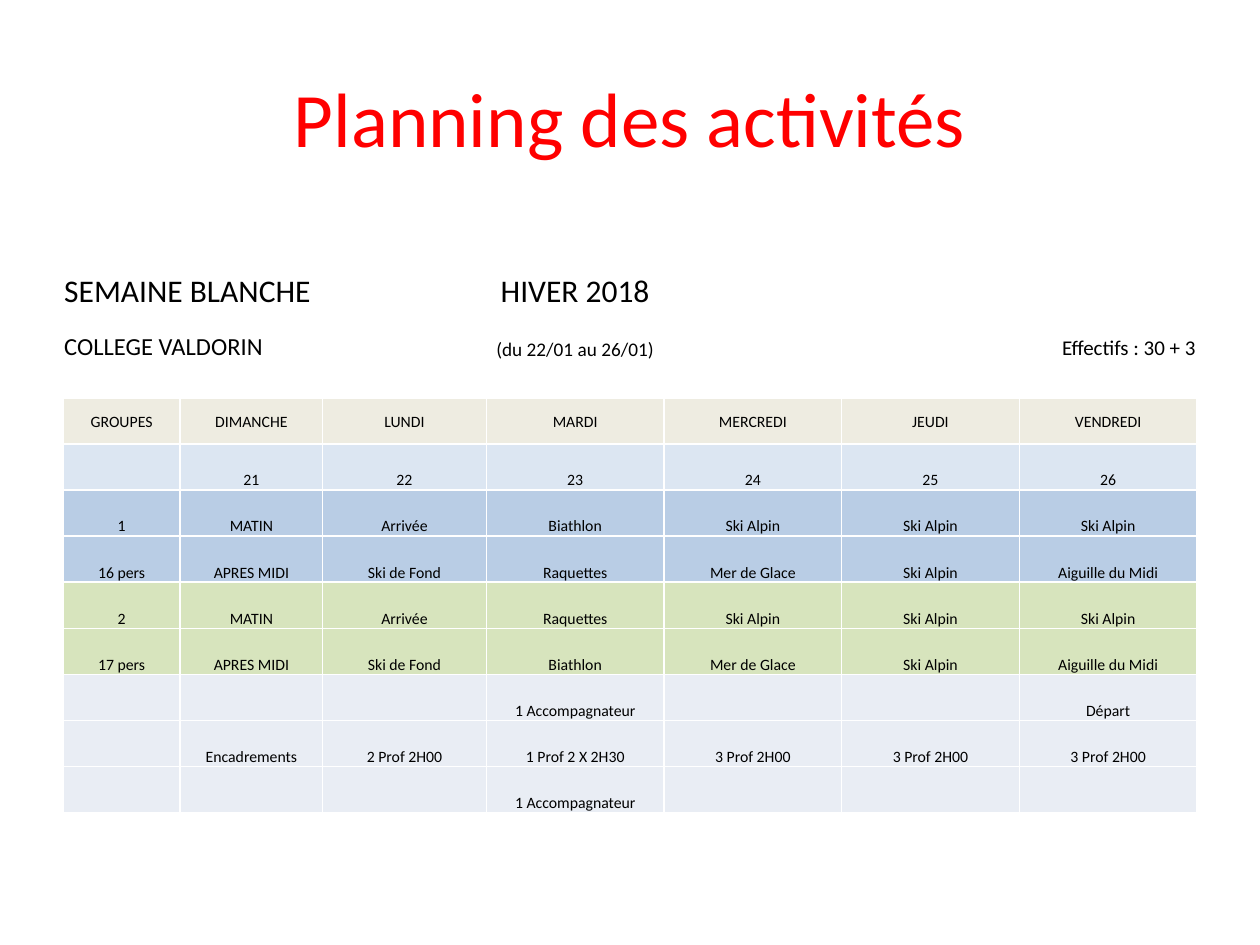
from lxml.etree import SubElement
from pptx import Presentation
from pptx.dml.color import RGBColor
from pptx.enum.text import MSO_ANCHOR, PP_ALIGN
from pptx.oxml.ns import qn
from pptx.util import Inches, Pt

RED = RGBColor(0xFF, 0x00, 0x00)
BLACK = RGBColor(0x00, 0x00, 0x00)
WHITE = RGBColor(0xFF, 0xFF, 0xFF)
BEIGE = RGBColor(0xEE, 0xEC, 0xE1)
PALE_BLUE = RGBColor(0xDC, 0xE6, 0xF2)
BLUE = RGBColor(0xB9, 0xCD, 0xE5)
GREEN = RGBColor(0xD7, 0xE4, 0xBD)
GREY = RGBColor(0xE9, 0xED, 0xF4)

FONT = "Calibri"
TITLE = "Planning des activités"
BODY_SIZE = 9

ROWS = [
    (WHITE, ["SEMAINE BLANCHE", "", "", "HIVER 2018", "", "", ""]),
    (WHITE, ["COLLEGE VALDORIN", "", "", "(du 22/01 au 26/01)", "", "", "Effectifs : 30 + 3"]),
    (WHITE, [""] * 7),
    (BEIGE, ["GROUPES", "DIMANCHE", "LUNDI", "MARDI", "MERCREDI", "JEUDI", "VENDREDI"]),
    (PALE_BLUE, ["", "21", "22", "23", "24", "25", "26"]),
    (BLUE, ["1", "MATIN", "Arrivée", "Biathlon", "Ski Alpin", "Ski Alpin", "Ski Alpin"]),
    (BLUE, ["16 pers", "APRES MIDI", "Ski de Fond", "Raquettes", "Mer de Glace",
            "Ski Alpin", "Aiguille du Midi"]),
    (GREEN, ["2", "MATIN", "Arrivée", "Raquettes", "Ski Alpin", "Ski Alpin", "Ski Alpin"]),
    (GREEN, ["17 pers", "APRES MIDI", "Ski de Fond", "Biathlon", "Mer de Glace",
             "Ski Alpin", "Aiguille du Midi"]),
    (GREY, ["", "", "", "1 Accompagnateur", "", "", "Départ"]),
    (GREY, ["", "Encadrements", "2 Prof 2H00", "1 Prof 2 X 2H30", "3 Prof 2H00",
            "3 Prof 2H00", "3 Prof 2H00"]),
    (GREY, ["", "", "", "1 Accompagnateur", "", "", ""]),
]
HEADER_ROW = 3
SPECIAL_TEXT = {
    (0, 0): (18, PP_ALIGN.LEFT),
    (0, 3): (18, PP_ALIGN.CENTER),
    (1, 0): (14, PP_ALIGN.LEFT),
    (1, 3): (11, PP_ALIGN.CENTER),
    (1, 6): (12, PP_ALIGN.RIGHT),
}
LAST_MERGED_COLUMN = {0: 2, 1: 1}

TABLE_HEIGHT = 4.45
COLUMN_WIDTHS = [0.93, 1.13, 1.3] + [1.41] * 4
TOP_HEIGHTS = [0.47, 0.4, 0.29]
GRID_ROW_COUNT = len(ROWS) - len(TOP_HEIGHTS)
GRID_ROW_HEIGHT = (TABLE_HEIGHT - sum(TOP_HEIGHTS)) / GRID_ROW_COUNT
ROW_HEIGHTS = TOP_HEIGHTS + [GRID_ROW_HEIGHT] * GRID_ROW_COUNT


def write(paragraph, text, size, color, alignment):
    paragraph.alignment = alignment
    if not text:
        end_properties = SubElement(paragraph._p, qn("a:endParaRPr"))
        end_properties.set("sz", str(size * 100))
        return
    run = paragraph.add_run()
    run.text = text
    run.font.name = FONT
    run.font.size = Pt(size)
    run.font.color.rgb = color


def add_title(slide):
    title = slide.shapes.add_textbox(Inches(0.5), Inches(0.3), Inches(9), Inches(1.25))
    title.text_frame.word_wrap = True
    title.text_frame.vertical_anchor = MSO_ANCHOR.MIDDLE
    write(title.text_frame.paragraphs[0], TITLE, 44, RED, PP_ALIGN.CENTER)


def add_planning(slide):
    table = slide.shapes.add_table(
        len(ROWS), len(COLUMN_WIDTHS), Inches(0.5), Inches(2),
        Inches(sum(COLUMN_WIDTHS)), Inches(TABLE_HEIGHT)).table
    table.first_row = False
    table.horz_banding = False
    for column, width in zip(table.columns, COLUMN_WIDTHS):
        column.width = Inches(width)
    for row, height in zip(table.rows, ROW_HEIGHTS):
        row.height = Inches(height)

    for row_index, (fill_color, texts) in enumerate(ROWS):
        for column_index, text in enumerate(texts):
            cell = table.cell(row_index, column_index)
            cell.fill.solid()
            cell.fill.fore_color.rgb = fill_color
            cell.margin_left = cell.margin_right = cell.margin_top = Inches(0.01)
            cell.margin_bottom = 0
            is_header = row_index == HEADER_ROW
            cell.vertical_anchor = MSO_ANCHOR.MIDDLE if is_header else MSO_ANCHOR.BOTTOM
            size, alignment = SPECIAL_TEXT.get(
                (row_index, column_index), (BODY_SIZE, PP_ALIGN.CENTER))
            write(cell.text_frame.paragraphs[0], text, size, BLACK, alignment)

    for row_index, last_column in LAST_MERGED_COLUMN.items():
        table.cell(row_index, 0).merge(table.cell(row_index, last_column))


def main():
    presentation = Presentation()
    presentation.slide_width = Inches(10)
    presentation.slide_height = Inches(7.5)
    slide = presentation.slides.add_slide(presentation.slide_layouts[6])
    add_title(slide)
    add_planning(slide)
    presentation.save("out.pptx")


if __name__ == "__main__":
    main()
